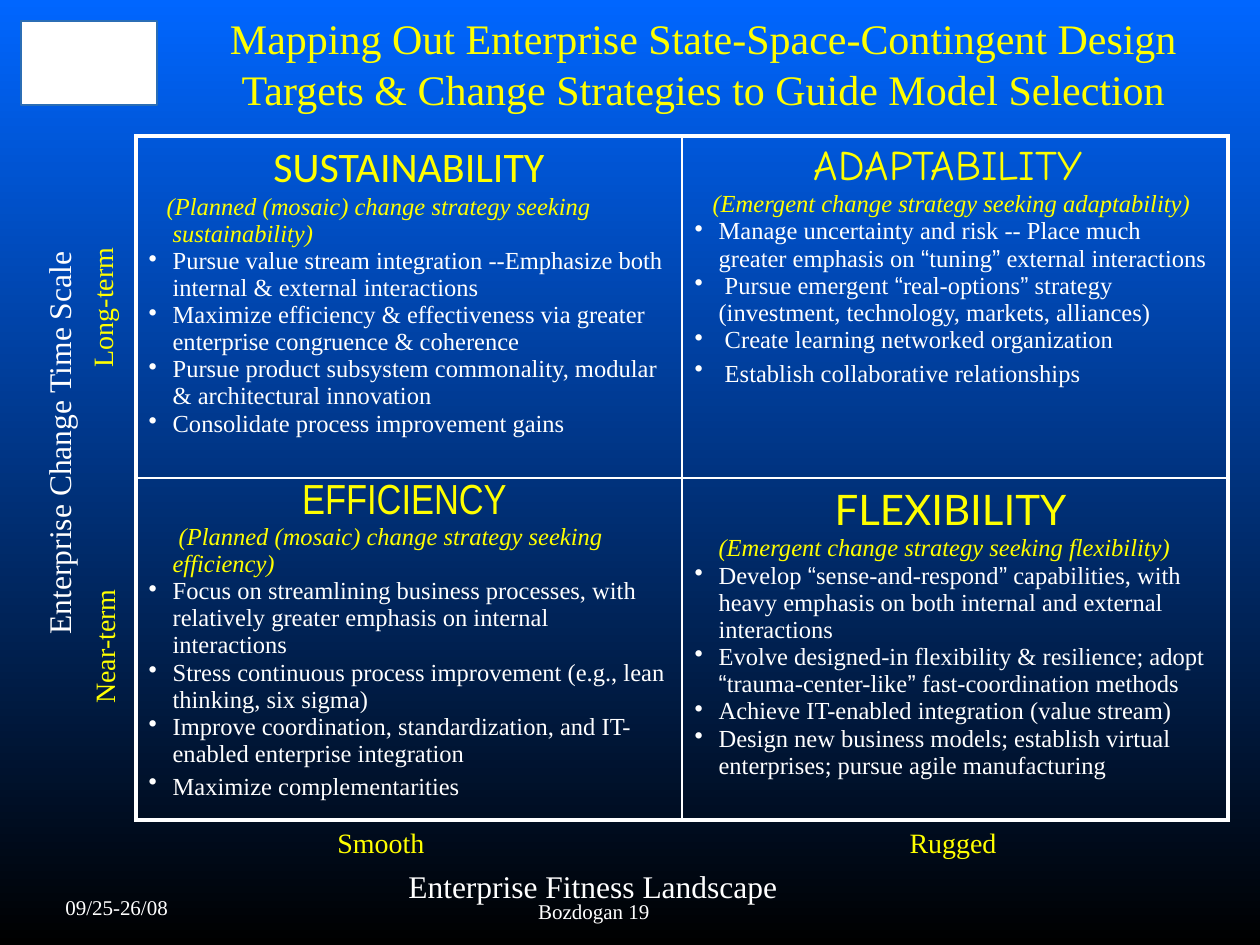
import itertools

import pptx
import pptx.dml.color
import pptx.enum.shapes
import pptx.enum.text
import pptx.oxml
import pptx.oxml.ns
import pptx.util

# Content
TITLE = ("Mapping Out Enterprise State-Space-Contingent Design "
         "Targets & Change Strategies to Guide Model Selection")
SERIF, QUOTE_FONT = "Times New Roman", "Arial"
YELLOW, WHITE = "FFFF00", "FFFFFF"

# Each quadrant: heading, its font, strategy, first-line indent (px), points
QUADRANTS = [
    [("SUSTAINABILITY", "Calibri",
      "(Planned (mosaic) change strategy seeking sustainability)", -6,
      ["Pursue value stream integration --Emphasize both internal & external interactions",
       "Maximize efficiency & effectiveness via greater enterprise congruence & coherence",
       "Pursue product subsystem commonality, modular & architectural innovation",
       "Consolidate process improvement gains"]),
     ("ADAPTABILITY ", "Comic Neue",
      "(Emergent change strategy seeking adaptability)", -6,
      ["Manage uncertainty and risk -- Place much greater emphasis on “tuning” external interactions",
       " Pursue emergent “real-options” strategy (investment, technology, markets, alliances)",
       " Create learning networked organization",
       " Establish collaborative relationships"])],
    [("EFFICIENCY ", "Arial Narrow",
      "(Planned (mosaic) change strategy seeking efficiency)", 6,
      ["Focus on streamlining business processes, with relatively greater emphasis on internal interactions",
       "Stress continuous process improvement (e.g., lean thinking, six sigma)",
       "Improve coordination, standardization, and IT-enabled enterprise integration",
       "Maximize complementarities"]),
     ("FLEXIBILITY ", "Lato",
      "(Emergent change strategy seeking flexibility)", 0,
      ["Develop “sense-and-respond” capabilities, with heavy emphasis on both internal and external interactions",
       "Evolve designed-in flexibility & resilience; adopt “trauma-center-like” fast-coordination methods",
       "Achieve IT-enabled integration (value stream)",
       "Design new business models; establish virtual enterprises; pursue agile manufacturing"])],
]
TALL_ENDINGS = {"Maximize complementarities", " Establish collaborative relationships"}

# Each label: text, box (px), rotation, alignment, size, colour
LABELS = [
    ("Smooth", (325, 819, 185, 47), 0, "LEFT", 16, YELLOW),
    ("Rugged", (861, 819, 184, 47), 0, "CENTER", 16, YELLOW),
    ("Enterprise Fitness Landscape", (396, 861, 665, 50), 0, "LEFT", 18, WHITE),
    ("Long-term", (-26, 284, 257, 47), 270, "CENTER", 16, YELLOW),
    ("Near-term", (21, 609, 167, 47), 270, "LEFT", 16, YELLOW),
    ("Enterprise Change Time Scale", (-204, 418, 525, 50), 270, "CENTER", 18, WHITE),
    ("09/25-26/08", (53, 888, 305, 38), 0, "LEFT", 12, WHITE),
    ("Bozdogan 19", (410, 892, 368, 38), 0, "CENTER", 12, WHITE),
]
TABLE_BOX = (136, 136, 1092, 684)
TITLE_BOX = (168, 0, 1071, 126)
LOGO_BOX = (21, 21, 136, 84)
HANGING = 24


def px(value):
    return round(value * 914400 / 126)


def rgb(value):
    return pptx.dml.color.RGBColor.from_string(value)


def add_run(paragraph, text, color, **formats):
    run = paragraph.add_run()
    run.text = text
    run.font.color.rgb = rgb(color)
    for key, value in formats.items():
        setattr(run.font, key, value)


def align(paragraph, name):
    paragraph.alignment = getattr(pptx.enum.text.PP_ALIGN, name)


def indent(paragraph, first_line):
    properties = paragraph._p.get_or_add_pPr()
    properties.set("marL", str(px(HANGING)))
    properties.set("indent", str(px(first_line)))
    return properties


def fill_quadrant(frame, heading, heading_font, strategy, first_line, points):
    paragraph = frame.paragraphs[0]
    align(paragraph, "CENTER")
    indent(paragraph, -HANGING)
    add_run(paragraph, heading, YELLOW, name=heading_font, size=pptx.util.Pt(24))

    body = {"name": SERIF, "size": pptx.util.Pt(14)}
    paragraph = frame.add_paragraph()
    indent(paragraph, first_line)
    add_run(paragraph, strategy, YELLOW, italic=True, **body)

    for point in points:
        paragraph = frame.add_paragraph()
        properties = indent(paragraph, -HANGING)
        bullet = pptx.oxml.parse_xml(
            f'<a:buChar {pptx.oxml.ns.nsdecls("a")} char="•"/>')
        properties.append(bullet)
        # Quotation marks have their own font
        for is_quote, letters in itertools.groupby(point, lambda c: c in "“”"):
            font = QUOTE_FONT if is_quote else SERIF
            add_run(paragraph, "".join(letters), WHITE, **{**body, "name": font})
        if point in TALL_ENDINGS:
            add_run(paragraph, " ", WHITE, name=SERIF, size=pptx.util.Pt(18), bold=True)


def add_borders(cell, row, column):
    widths = {"L": 1 if column else 2.25, "R": 2.25 if column else 1,
              "T": 1 if row else 2.25, "B": 2.25 if row else 1}
    for side, width in widths.items():
        cell._tc.get_or_add_tcPr().append(pptx.oxml.parse_xml(
            f'<a:ln{side} {pptx.oxml.ns.nsdecls("a")} w="{int(width * 12700)}">'
            f'<a:solidFill><a:srgbClr val="{WHITE}"/></a:solidFill></a:ln{side}>'))


def main():
    deck = pptx.Presentation()
    deck.slide_width, deck.slide_height = px(1260), px(945)
    slide = deck.slides.add_slide(deck.slide_layouts[5])

    # Background fading downwards
    background = slide.background.fill
    background.gradient()
    background.gradient_angle = 270
    for stop, color, position in zip(background.gradient_stops, ("0066FF", "000000"), (0, 1)):
        stop.color.rgb = rgb(color)
        stop.position = position

    # Plain block in the logo's place
    logo = slide.shapes.add_shape(pptx.enum.shapes.MSO_SHAPE.RECTANGLE, *map(px, LOGO_BOX))
    logo.shadow.inherit = False
    logo.fill.solid()
    logo.fill.fore_color.rgb = rgb(WHITE)
    logo.line.color.rgb = rgb("2B6EB5")
    logo.line.width = pptx.util.Pt(1)

    # Title
    title = slide.shapes.title
    for side, value in zip(("left", "top", "width", "height"), TITLE_BOX):
        setattr(title, side, px(value))
    title.text_frame.auto_size = pptx.enum.text.MSO_AUTO_SIZE.NONE
    title.text_frame.vertical_anchor = pptx.enum.text.MSO_ANCHOR.MIDDLE
    heading = title.text_frame.paragraphs[0]
    align(heading, "CENTER")
    add_run(heading, TITLE, YELLOW, name=SERIF, size=pptx.util.Pt(24))

    # Quadrant table
    matrix = slide.shapes.add_table(2, 2, *map(px, TABLE_BOX)).table
    matrix.first_row = matrix.horz_banding = False
    for row, quadrants in enumerate(QUADRANTS):
        for column, quadrant in enumerate(quadrants):
            cell = matrix.cell(row, column)
            add_borders(cell, row, column)
            cell.fill.background()
            fill_quadrant(cell.text_frame, *quadrant)

    # Axis labels and footer
    for text, box, rotation, alignment, size, color in LABELS:
        label = slide.shapes.add_textbox(*map(px, box))
        label.rotation = rotation
        label.text_frame.word_wrap = True
        paragraph = label.text_frame.paragraphs[0]
        align(paragraph, alignment)
        add_run(paragraph, text, color, name=SERIF, size=pptx.util.Pt(size))

    deck.save("out.pptx")


if __name__ == "__main__":
    main()
